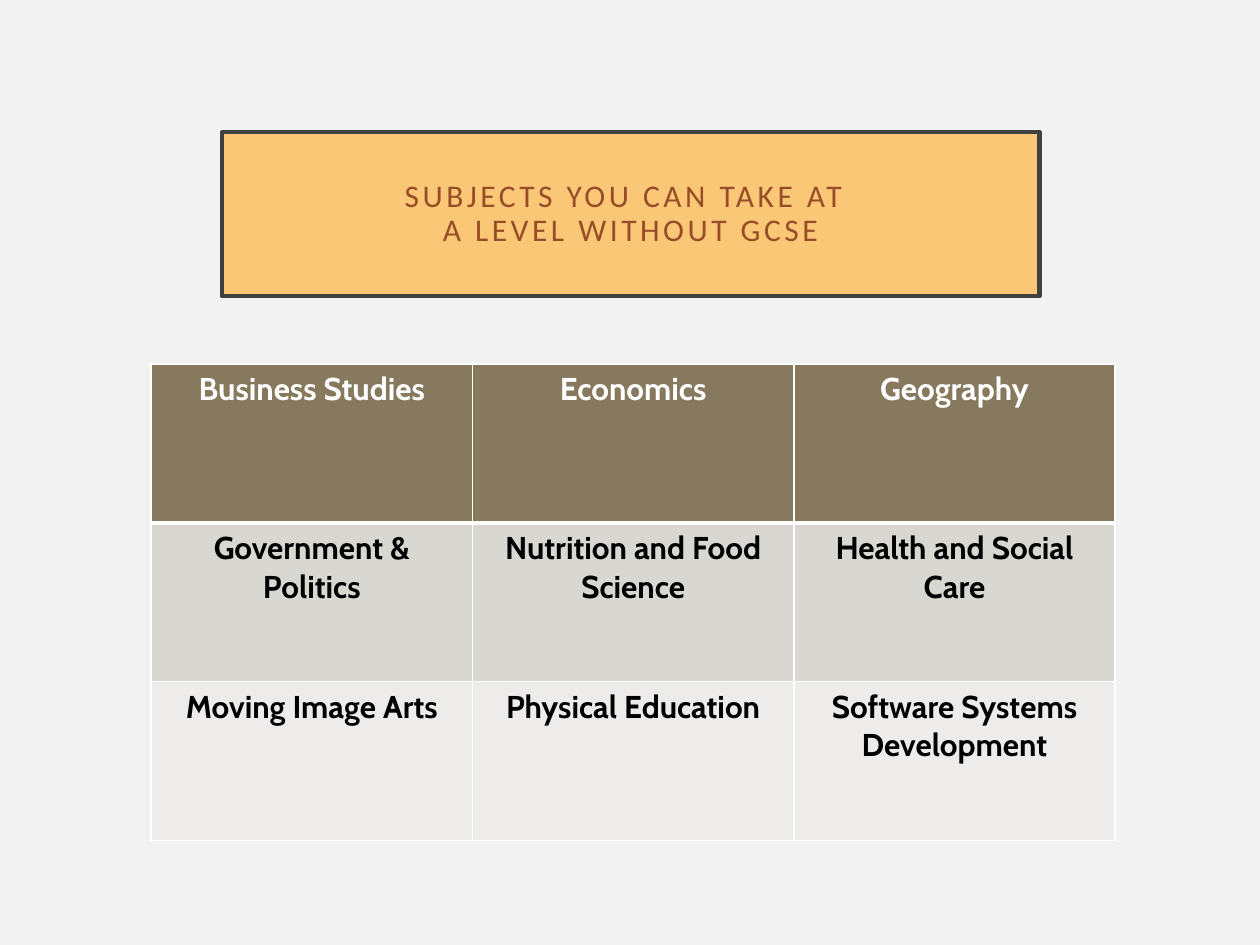
from dataclasses import dataclass

import pptx
import pptx.dml.color
import pptx.enum.text
import pptx.oxml.ns
import pptx.util
from lxml import etree

Inches, Pt = pptx.util.Inches, pptx.util.Pt
RGBColor = pptx.dml.color.RGBColor
PP_ALIGN = pptx.enum.text.PP_ALIGN
qn = pptx.oxml.ns.qn

BACKGROUND = RGBColor(0xF2, 0xF2, 0xF2)
AMBER = RGBColor(0xFA, 0xC7, 0x77)
CHARCOAL = RGBColor(0x40, 0x40, 0x40)
RUST = RGBColor(0x97, 0x4D, 0x25)
OLIVE = RGBColor(0x87, 0x79, 0x5D)
STONE = RGBColor(0xD9, 0xD7, 0xD2)
PALE_STONE = RGBColor(0xED, 0xEC, 0xEA)
WHITE = RGBColor(0xFF, 0xFF, 0xFF)
BLACK = RGBColor(0x00, 0x00, 0x00)

TITLE_LINES = ("SUBJECTS YOU CAN TAKE AT ", "A LEVEL WITHOUT GCSE")
COL_WIDTH, ROW_HEIGHT = 2.55, 1.26


@dataclass
class SubjectRow:
    subjects: tuple[str, ...]
    fill: RGBColor
    color: RGBColor
    top: float = 1  # border widths in points
    bottom: float = 1


ROWS = [
    SubjectRow(("Business Studies", "Economics", "Geography"), OLIVE, WHITE, bottom=3),
    SubjectRow(("Government & Politics", "Nutrition and Food Science",
                "Health and Social Care"), STONE, BLACK, top=3),
    SubjectRow(("Moving Image Arts", "Physical Education",
                "Software Systems Development"), PALE_STONE, BLACK),
]


def add_run(p, text: str, font: str, color: RGBColor, bold: bool = False):
    r = p.add_run()
    r.text = text
    r.font.name, r.font.size, r.font.bold = font, Pt(18), bold
    r.font.color.rgb = color
    return r


def add_border(cell, side: str, width: float) -> None:
    ln = etree.SubElement(cell._tc.get_or_add_tcPr(), qn(f"a:ln{side}"), w=str(Pt(width)))
    fill = etree.SubElement(ln, qn("a:solidFill"))
    etree.SubElement(fill, qn("a:srgbClr"), val=str(WHITE))


def format_title(sp) -> None:
    sp.left, sp.top = Inches(1.76), Inches(1.05)
    sp.width, sp.height = Inches(6.49), Inches(1.3)
    sp.fill.solid()
    sp.fill.fore_color.rgb = AMBER
    sp.line.color.rgb = CHARCOAL
    sp.line.width = Pt(2.5)
    tf = sp.text_frame
    tf.word_wrap = True
    tf.auto_size = pptx.enum.text.MSO_AUTO_SIZE.NONE
    tf.vertical_anchor = pptx.enum.text.MSO_ANCHOR.MIDDLE
    tf.margin_left = tf.margin_right = tf.margin_top = tf.margin_bottom = Inches(0.2)
    p = tf.paragraphs[0]
    p.alignment, p.line_spacing = PP_ALIGN.CENTER, 0.9
    for i, line in enumerate(TITLE_LINES):
        if i:
            p.add_line_break()
        r = add_run(p, line, "Calibri", RUST)
        r.font._element.set("spc", "200")  # letter spacing of 2 pt


def fill_cell(cell, subject: str, row: SubjectRow) -> None:
    for side, width in (("L", 1), ("R", 1), ("T", row.top), ("B", row.bottom)):
        add_border(cell, side, width)
    cell.fill.solid()
    cell.fill.fore_color.rgb = row.fill
    p = cell.text_frame.paragraphs[0]
    p.alignment = PP_ALIGN.CENTER
    add_run(p, subject, "Cabin", row.color, bold=True)


def add_subject_table(s, rows: list[SubjectRow]) -> None:
    n_cols = len(rows[0].subjects)
    table = s.shapes.add_table(
        len(rows), n_cols, Inches(1.2), Inches(2.89),
        Inches(COL_WIDTH * n_cols), Inches(ROW_HEIGHT * len(rows))).table
    for col in table.columns:
        col.width = Inches(COL_WIDTH)
    for i, row in enumerate(rows):
        table.rows[i].height = Inches(ROW_HEIGHT)
        for j, subject in enumerate(row.subjects):
            fill_cell(table.cell(i, j), subject, row)


def main() -> None:
    prs = pptx.Presentation()
    prs.slide_width, prs.slide_height = Inches(10), Inches(7.5)
    s = prs.slides.add_slide(prs.slide_layouts[5])  # title only

    # Background
    s.background.fill.solid()
    s.background.fill.fore_color.rgb = BACKGROUND

    # Title and table of subjects
    format_title(s.shapes.title)
    add_subject_table(s, ROWS)
    prs.save("out.pptx")


if __name__ == "__main__":
    main()
